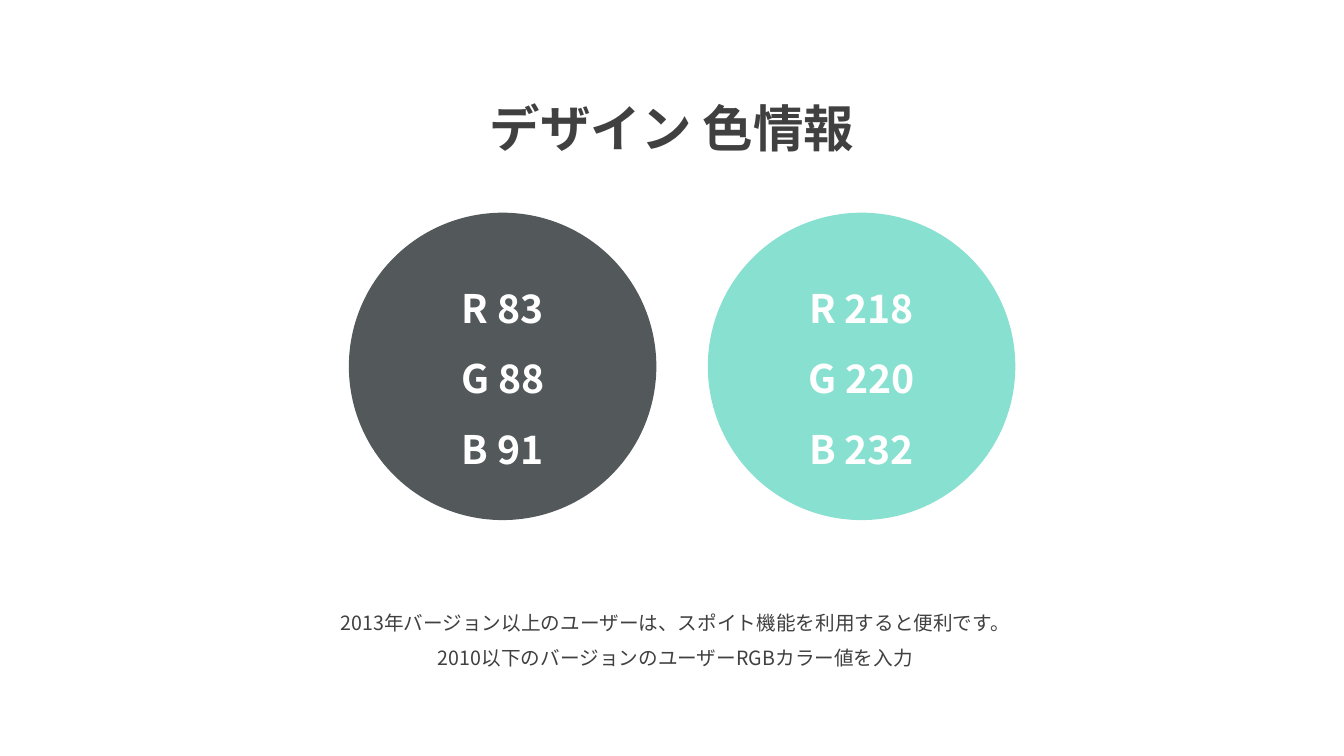
from dataclasses import dataclass

from lxml import etree
from pptx import Presentation
from pptx.dml.color import RGBColor
from pptx.enum import shapes, text
from pptx.oxml import ns

SCALE = 9144  # EMU per px, 100 px to the inch


@dataclass(frozen=True)
class Theme:
    face: str = "Noto Sans CJK KR"
    ink: str = "404040"
    white: str = "FFFFFF"
    slate: str = "53585B"
    mint: str = "88E0D0"
    title: int = 36
    value: int = 28
    note: int = 14
    lead: float = 1.5


THEME = Theme()


def px(*sizes):
    return [size * SCALE for size in sizes]


def write(frame, lines, size, color=THEME.ink, bold=False):
    """Fill a text frame with centred lines, one paragraph each."""
    frame.word_wrap = True
    for i, line in enumerate(lines):
        para = frame.add_paragraph() if i else frame.paragraphs[0]
        para.alignment = text.PP_ALIGN.CENTER
        para.line_spacing = THEME.lead
        run = para.add_run()
        run.text = line
        font = run.font
        font.size = size * 12700
        font.bold = bold
        font.color.rgb = RGBColor.from_string(color)
        font.name = THEME.face
        east = etree.SubElement(run._r.get_or_add_rPr(), ns.qn("a:ea"))
        east.set("typeface", THEME.face)


def label(slide, box, lines, size, **format):
    frame = slide.shapes.add_textbox(*px(*box)).text_frame
    frame.auto_size = text.MSO_AUTO_SIZE.SHAPE_TO_FIT_TEXT
    write(frame, lines, size, **format)


def swatch(slide, left, fill, values):
    """Draw a colour disc that lists its R, G and B values."""
    disc = slide.shapes.add_shape(
        shapes.MSO_SHAPE.OVAL, *px(left, 211, 305, 305))
    disc.shadow.inherit = False
    disc.fill.solid()
    disc.fill.fore_color.rgb = RGBColor.from_string(fill)
    disc.line.fill.background()
    disc.text_frame.vertical_anchor = text.MSO_ANCHOR.MIDDLE
    lines = [f"{name} {value}" for name, value in zip("RGB", values)]
    write(disc.text_frame, lines, THEME.value, color=THEME.white, bold=True)


def main():
    deck = Presentation()
    deck.slide_width, deck.slide_height = px(1333, 750)
    slide = deck.slides.add_slide(deck.slide_layouts[6])

    swatch(slide, 346, THEME.slate, (83, 88, 91))
    swatch(slide, 702, THEME.mint, (218, 220, 232))
    label(slide, (424, 61, 485, 91), ["デザイン 色情報"],
          THEME.title, bold=True)
    label(slide, (252, 589, 836, 77), [
        "2013年バージョン以上のユーザーは、スポイト機能を利用すると便利です。",
        "2010以下のバージョンのユーザーRGBカラー値を入力",
    ], THEME.note)

    deck.save("out.pptx")


if __name__ == "__main__":
    main()
